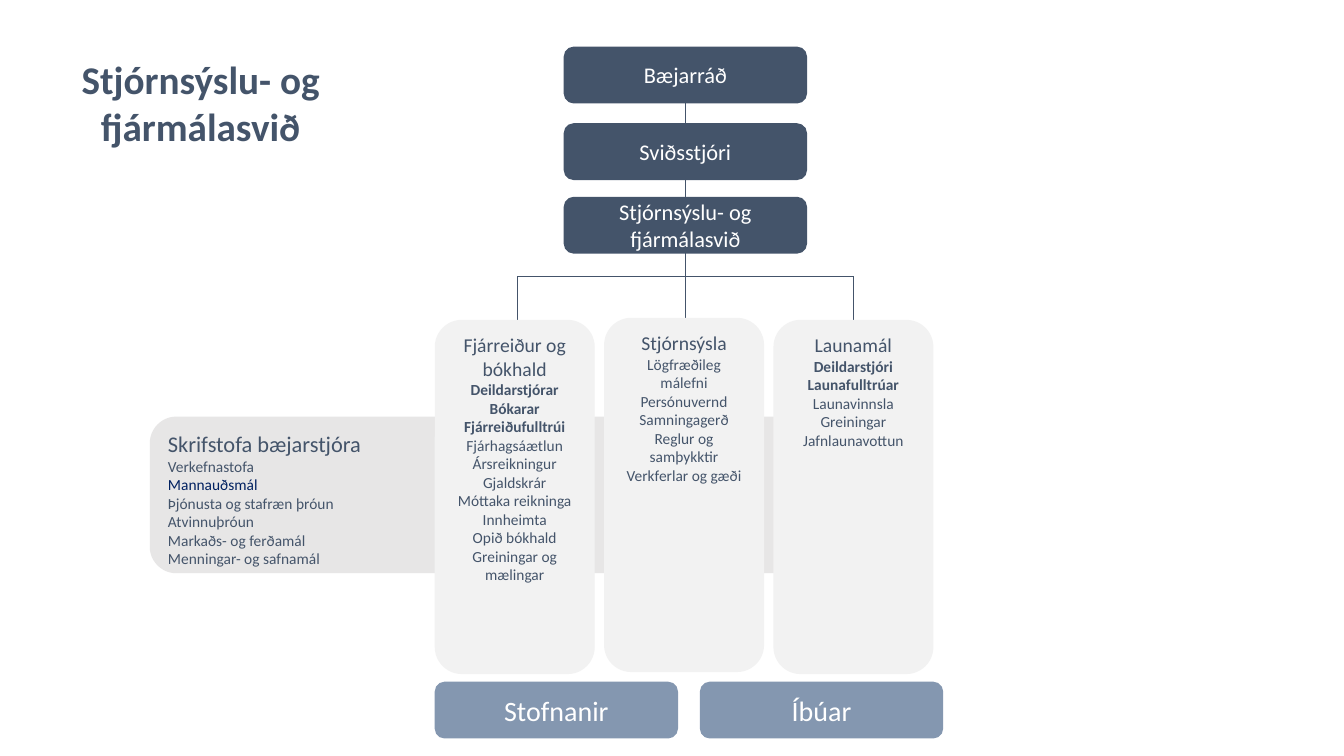
import dataclasses

import pptx
import pptx.dml.color
import pptx.enum.shapes
import pptx.enum.text
import pptx.oxml
import pptx.util

ALIGN = pptx.enum.text.PP_ALIGN
ANCHOR = pptx.enum.text.MSO_ANCHOR
WIDTH = pptx.util.Inches(13.33)
HEIGHT = pptx.util.Inches(7.5)


@dataclasses.dataclass(frozen=True)
class Theme:
    font: str = "Calibri"
    navy: str = "44546A"
    accent: str = "002060"
    steel: str = "8497B0"
    panel: str = "E7E6E6"
    card: str = "F2F2F2"
    white: str = "FFFFFF"
    title: float = 28
    audience: float = 20
    heading: float = 16
    card_heading: float = 14
    item: float = 11
    outline: float = 1
    link: float = 0.5


THEME = Theme()

# Positions are percentages of the slide's width (x) and height (y).
AXIS = 51
BOX_WIDTH, BOX_HEIGHT = 18, 7.33
CHAIN = [("Bæjarráð", 6.27), ("Sviðsstjóri", 16.4),
         ("Stjórnsýslu- og fjármálasvið", 26.13)]
RAIL_Y, BRANCH_END, BRANCH_STEP = 36.53, 44.67, 12.53
CARD_LEFT, CARD_STEP, CARD_WIDTH, CARD_HEIGHT = 32.4, 12.6, 11.8, 46.67
AUDIENCES = [("Stofnanir", 32.4), ("Íbúar", 52.13)]

OFFICE = ("Skrifstofa bæjarstjóra",
          ["Verkefnastofa", "Mannauðsmál", "Þjónusta og stafræn þróun",
           "Atvinnuþróun", "Markaðs- og ferðamál", "Menningar- og safnamál"])
# Each card: top, heading, staff in bold, tasks.
CARDS = [
    (42.4, "Fjárreiður og bókhald",
     ["Deildarstjórar", "Bókarar", "Fjárreiðufulltrúi"],
     ["Fjárhagsáætlun", "Ársreikningur", "Gjaldskrár", "Móttaka reikninga",
      "Innheimta", "Opið bókhald", "Greiningar og mælingar"]),
    (42.13, "Stjórnsýsla", [],
     ["Lögfræðileg málefni", "Persónuvernd", "Samningagerð",
      "Reglur og samþykktir", "Verkferlar og gæði"]),
    (42.4, "Launamál", ["Deildarstjóri", "Launafulltrúar"],
     ["Launavinnsla", "Greiningar", "Jafnlaunavottun"]),
]


def across(share):
    return round(WIDTH * share / 100)


def down(share):
    return round(HEIGHT * share / 100)


def rgb(colour):
    return pptx.dml.color.RGBColor.from_string(colour)


def format_para(para, size, colour, align, bold=False):
    para.alignment = align
    for span in para.runs:
        span.font.name = THEME.font
        span.font.size = pptx.util.Pt(size)
        span.font.bold = bold
        span.font.color.rgb = rgb(colour)


def add_panel(page, left, top, width, height, colour):
    panel = page.shapes.add_shape(
        pptx.enum.shapes.MSO_SHAPE.ROUNDED_RECTANGLE,
        across(left), down(top), across(width), down(height))
    panel.shadow.inherit = False
    panel.fill.solid()
    panel.fill.fore_color.rgb = rgb(colour)
    panel.line.color.rgb = rgb(colour)
    panel.line.width = pptx.util.Pt(THEME.outline)
    panel.text_frame.word_wrap = True
    return panel


def add_box(page, label, left, top, colour, size):
    box = add_panel(page, left, top, BOX_WIDTH, BOX_HEIGHT, colour)
    box.text_frame.text = label
    box.text_frame.vertical_anchor = ANCHOR.MIDDLE
    format_para(box.text_frame.paragraphs[0], size, THEME.white, ALIGN.CENTER)


def fill_list(panel, heading, heading_size, items, align, bold=(), accented=()):
    """Write a heading and its items from the top of a panel."""
    frame = panel.text_frame
    frame.vertical_anchor = ANCHOR.TOP
    frame.text = "\n".join([heading, *items])
    first, *rest = frame.paragraphs
    format_para(first, heading_size, THEME.navy, align)
    for para in rest:
        colour = THEME.accent if para.text in accented else THEME.navy
        format_para(para, THEME.item, colour, align, para.text in bold)


def add_link(page, x1, y1, x2, y2):
    link = page.shapes.add_connector(
        pptx.enum.shapes.MSO_CONNECTOR.STRAIGHT,
        across(x1), down(y1), across(x2), down(y2))
    link.line.color.rgb = rgb(THEME.navy)
    link.line.width = pptx.util.Pt(THEME.link)
    link._element.spPr.append(pptx.oxml.parse_xml(
        '<a:effectLst xmlns:a='
        '"http://schemas.openxmlformats.org/drawingml/2006/main"/>'))


def set_title(page, text):
    title = page.shapes.title
    title.left, title.top = across(1.95), down(4.27)
    title.width, title.height = across(25.95), down(18.53)
    title.fill.solid()
    title.fill.fore_color.rgb = rgb(THEME.white)
    frame = title.text_frame
    frame.text = text
    frame.word_wrap = True
    frame.auto_size = pptx.enum.text.MSO_AUTO_SIZE.NONE
    frame.vertical_anchor = ANCHOR.MIDDLE
    format_para(frame.paragraphs[0], THEME.title, THEME.navy, ALIGN.CENTER, True)


def add_links(page):
    add_link(page, AXIS, CHAIN[0][1] + BOX_HEIGHT, AXIS, RAIL_Y)
    add_link(page, AXIS - BRANCH_STEP, RAIL_Y, AXIS + BRANCH_STEP, RAIL_Y)
    for step in (-1, 0, 1):
        x = AXIS + step * BRANCH_STEP
        add_link(page, x, RAIL_Y, x, BRANCH_END)


def main():
    deck = pptx.Presentation()
    deck.slide_width, deck.slide_height = WIDTH, HEIGHT
    page = deck.slides.add_slide(deck.slide_layouts.get_by_name("Title Only"))
    set_title(page, "Stjórnsýslu- og fjármálasvið")

    office = add_panel(page, 11.2, 55.2, 56.7, 20.53, THEME.panel)
    fill_list(office, OFFICE[0], THEME.heading, OFFICE[1], ALIGN.LEFT,
              accented=["Mannauðsmál"])
    add_links(page)

    for column, (top, heading, staff, tasks) in enumerate(CARDS):
        card = add_panel(page, CARD_LEFT + column * CARD_STEP, top,
                         CARD_WIDTH, CARD_HEIGHT, THEME.card)
        fill_list(card, heading, THEME.card_heading, staff + tasks,
                  ALIGN.CENTER, bold=staff)
    for label, top in CHAIN:
        add_box(page, label, AXIS - BOX_WIDTH / 2, top, THEME.navy, THEME.heading)
    for label, left in AUDIENCES:
        add_box(page, label, left, 90.27, THEME.steel, THEME.audience)

    deck.save("out.pptx")


if __name__ == "__main__":
    main()
